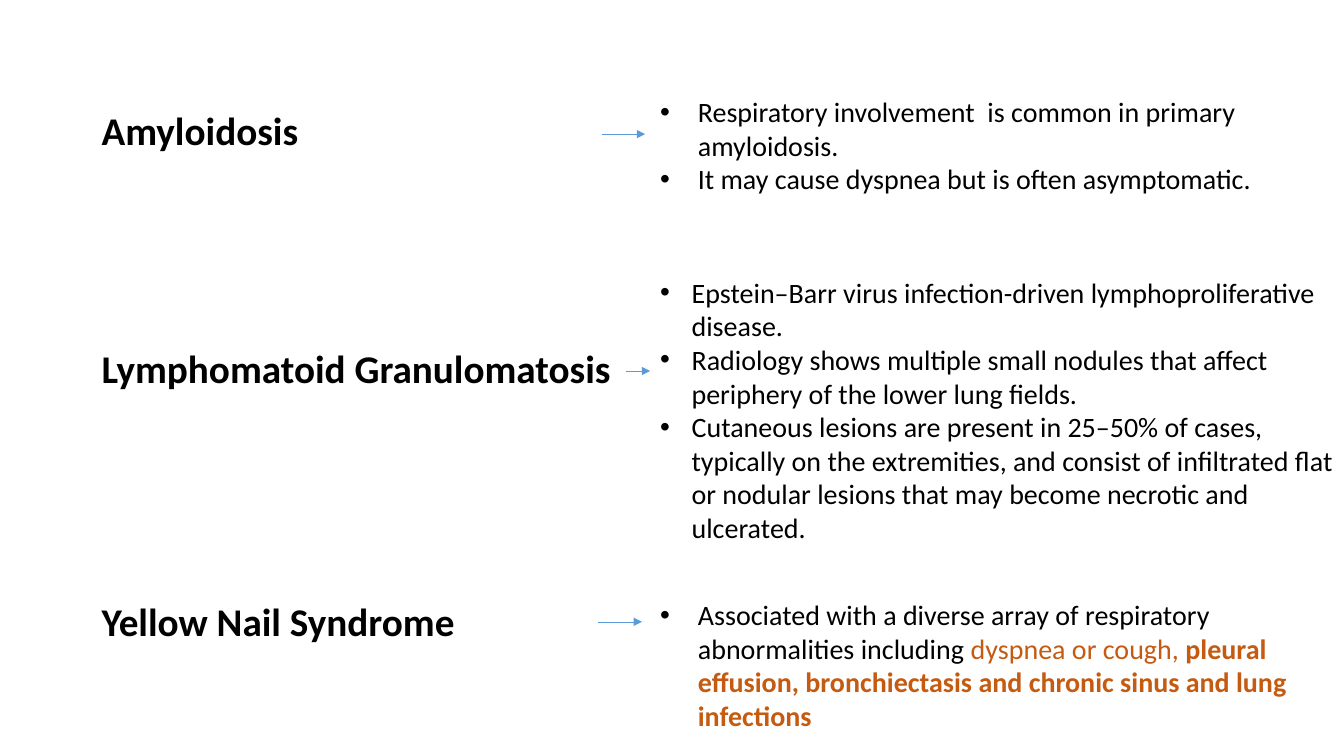
"""Build a slide that pairs three rare lung diseases with their key facts."""
from dataclasses import dataclass

from lxml.etree import SubElement
from pptx import Presentation
from pptx.dml.color import RGBColor
from pptx.enum.shapes import MSO_CONNECTOR
from pptx.enum.text import MSO_AUTO_SIZE
from pptx.oxml.ns import qn
from pptx.slide import Slide
from pptx.text.text import TextFrame, _Paragraph
from pptx.util import Pt

COLOURS = {"text": "000000", "accent": "C55A11", "arrow": "5B9BD5"}
FONT = "Calibri"
NAME_LEFT = 65.5
NAME_HEIGHT = 41
NAME_SIZE = 28
FACTS_LEFT = 464.4
FACTS_SIZE = 20


@dataclass(frozen=True)
class Span:
    """A stretch of text in one style."""

    text: str
    colour: str = "text"
    bold: bool = False


@dataclass(frozen=True)
class Arrow:
    """A horizontal arrow from a disease to its facts."""

    start: float
    end: float
    top: float


@dataclass(frozen=True)
class Disease:
    """A disease name, its arrow and its bulleted facts."""

    name: str
    name_top: float
    name_width: float
    arrow: Arrow
    facts_top: float
    facts_width: float
    facts_height: float
    indent: float
    facts: tuple[tuple[Span, ...], ...]


DISEASES = (
    Disease(
        "Amyloidosis", 72.7, 156.2, Arrow(429.8, 460.8, 95.8),
        64.1, 472.3, 79.9, 27,
        (
            (Span("Respiratory involvement  is common in primary amyloidosis."),),
            (Span("It may cause dyspnea but is often asymptomatic."),),
        ),
    ),
    Disease(
        "Lymphomatoid Granulomatosis", 242.6, 381.6, Arrow(447.1, 464.4, 265),
        193, 495.4, 200.9, 22.5,
        (
            (Span("Epstein–Barr virus infection-driven lymphoproliferative disease."),),
            (Span("Radiology shows multiple small nodules that affect "
                  "periphery of the lower lung fields."),),
            (Span("Cutaneous lesions are present in 25–50% of cases, typically on "
                  "the extremities, and consist of infiltrated flat or nodular "
                  "lesions that may become necrotic and ulcerated."),),
        ),
    ),
    Disease(
        "Yellow Nail Syndrome", 423.4, 269.3, Arrow(427, 458.6, 444.2),
        423.4, 482.4, 104.4, 27,
        (
            (
                Span("Associated with a diverse array of respiratory "
                     "abnormalities including "),
                Span("dyspnea or cough, ", "accent"),
                Span("pleural effusion, bronchiectasis and chronic sinus and "
                     "lung infections", "accent", True),
            ),
        ),
    ),
)


def colour_of(name: str) -> RGBColor:
    """Return the named colour."""
    return RGBColor.from_string(COLOURS[name])


def add_box(page: Slide, left: float, top: float, width: float, height: float,
            wrap: bool) -> TextFrame:
    """Add a text box that grows with its text and return its frame."""
    box = page.shapes.add_textbox(Pt(left), Pt(top), Pt(width), Pt(height))
    frame = box.text_frame
    frame.word_wrap = wrap
    frame.auto_size = MSO_AUTO_SIZE.SHAPE_TO_FIT_TEXT
    return frame


def add_span(para: _Paragraph, span: Span, size: float) -> None:
    """Append one styled run to a paragraph."""
    run = para.add_run()
    run.text = span.text
    run.font.name = FONT
    run.font.size = Pt(size)
    run.font.bold = span.bold
    run.font.color.rgb = colour_of(span.colour)


def set_bullet(para: _Paragraph, indent: float) -> None:
    """Give a paragraph a round bullet with a hanging indent."""
    properties = para._p.get_or_add_pPr()
    properties.set("marL", str(Pt(indent)))
    properties.set("indent", str(-Pt(indent)))
    SubElement(properties, qn("a:buFont"), typeface="Arial")
    SubElement(properties, qn("a:buChar"), char="•")


def add_arrow(page: Slide, arrow: Arrow) -> None:
    """Draw a thin arrow without a shadow."""
    line = page.shapes.add_connector(
        MSO_CONNECTOR.STRAIGHT,
        Pt(arrow.start), Pt(arrow.top), Pt(arrow.end), Pt(arrow.top),
    )
    line.line.color.rgb = colour_of("arrow")
    line.line.width = Pt(0.5)
    SubElement(line.line._get_or_add_ln(), qn("a:tailEnd"), type="triangle")
    SubElement(line._element.spPr, qn("a:effectLst"))


def add_disease(page: Slide, disease: Disease) -> None:
    """Draw a disease name, its arrow and its facts."""
    name = add_box(page, NAME_LEFT, disease.name_top, disease.name_width,
                   NAME_HEIGHT, False)
    add_span(name.paragraphs[0], Span(disease.name, bold=True), NAME_SIZE)

    facts = add_box(page, FACTS_LEFT, disease.facts_top, disease.facts_width,
                    disease.facts_height, True)
    for index, fact in enumerate(disease.facts):
        para = facts.add_paragraph() if index else facts.paragraphs[0]
        set_bullet(para, disease.indent)
        for span in fact:
            add_span(para, span, FACTS_SIZE)

    add_arrow(page, disease.arrow)


def main() -> None:
    """Build and save the deck."""
    deck = Presentation()
    deck.slide_width, deck.slide_height = Pt(960), Pt(540)
    page = deck.slides.add_slide(deck.slide_layouts.get_by_name("Blank"))
    for disease in DISEASES:
        add_disease(page, disease)
    deck.save("out.pptx")


if __name__ == "__main__":
    main()
